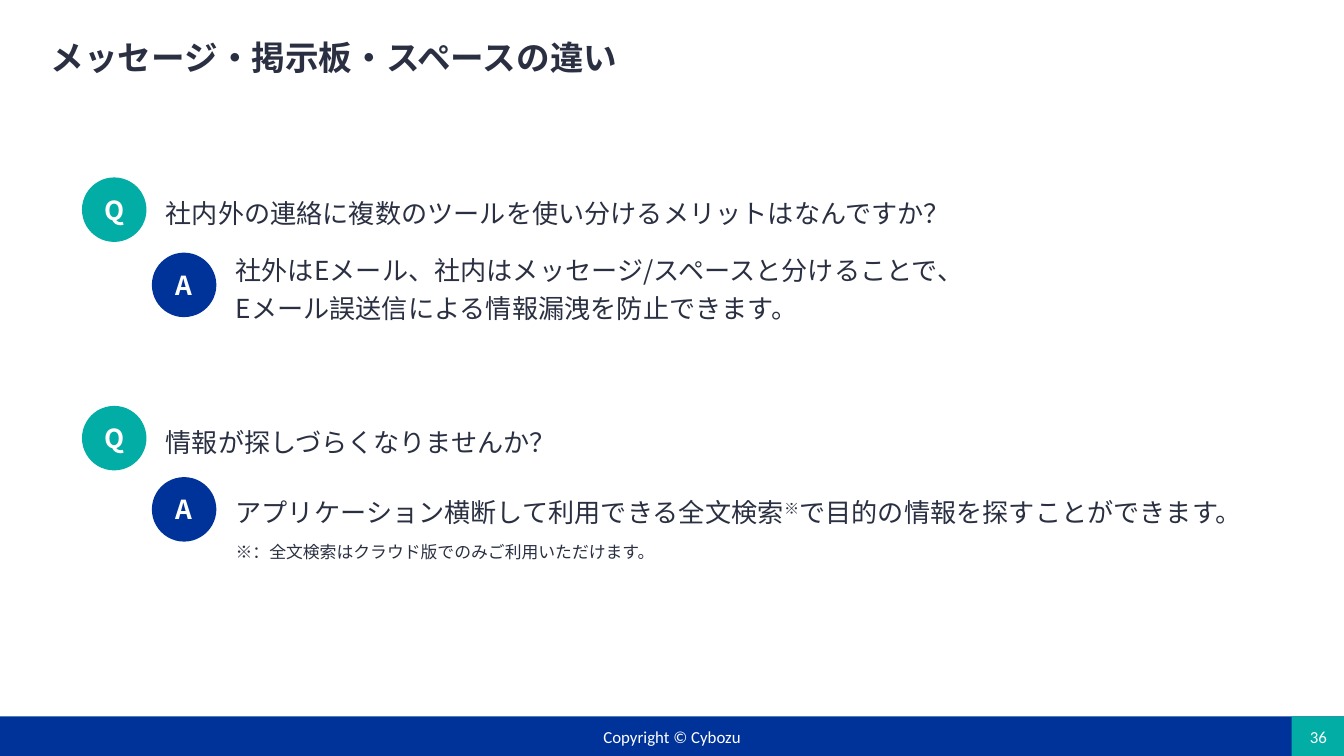
from lxml.etree import SubElement
from pptx import Presentation
from pptx.dml.color import RGBColor
from pptx.enum.shapes import MSO_SHAPE
from pptx.enum.text import MSO_ANCHOR, PP_ALIGN
from pptx.oxml.ns import qn
from pptx.util import Inches, Pt

CELL = 0.1
COLUMNS, ROWS = 100, 56.25
FOOTER_ROW = 53.3
FOOTER_ROWS = ROWS - FOOTER_ROW
QUESTION_COLUMN, ANSWER_COLUMN = 6.1, 11.3
BADGE_CELLS = 4.8
TEXT_OFFSET = 5.25

BLUE, TEAL, INK, WHITE = "003399", "01ADA4", "2A3042", "FFFFFF"
BODY_FONT, FOOTER_FONT = "Noto Sans CJK JP", "Calibri"


def color(hex_code):
    return RGBColor.from_string(hex_code)


def place(column, row, columns, rows):
    return [Inches(cells * CELL) for cells in (column, row, columns, rows)]


def set_margins(frame, horizontal, vertical):
    frame.margin_left = frame.margin_right = Inches(horizontal)
    frame.margin_top = frame.margin_bottom = Inches(vertical)


def add_span(para, text, size, hex_code=INK, font=BODY_FONT, bold=False, **attributes):
    span = para.add_run()
    span.text = text
    span.font.size = Pt(size)
    span.font.bold = bold
    span.font.name = font
    span.font.color.rgb = color(hex_code)
    properties = span._r.get_or_add_rPr()
    SubElement(properties, qn("a:ea"), typeface=font)
    for name, value in attributes.items():
        properties.set(name, value)


def add_block(page, kind, area, fill):
    block = page.shapes.add_shape(kind, *place(*area))
    block.shadow.inherit = False
    block.fill.solid()
    block.fill.fore_color.rgb = color(fill)
    block.line.fill.background()
    return block


def add_text(page, area, anchor=MSO_ANCHOR.TOP, spacing=None):
    frame = page.shapes.add_textbox(*place(*area)).text_frame
    frame.word_wrap = True
    frame.vertical_anchor = anchor
    para = frame.paragraphs[0]
    if spacing:
        para.line_spacing = spacing
    return frame, para


def add_title(page, text):
    frame, para = add_text(page, (2.8, 2.1, 90, 4.7), MSO_ANCHOR.MIDDLE, 0.9)
    add_span(para, text, 18, bold=True)


def add_badge(page, letter, column, row, fill):
    area = (column, row, BADGE_CELLS, BADGE_CELLS)
    badge = add_block(page, MSO_SHAPE.ROUNDED_RECTANGLE, area, fill)
    badge.adjustments[0] = 0.5
    frame = badge.text_frame
    set_margins(frame, 0, 0)
    frame.vertical_anchor = MSO_ANCHOR.MIDDLE
    para = frame.paragraphs[0]
    para.alignment = PP_ALIGN.CENTER
    add_span(para, letter, 14, WHITE, bold=True, spc="80")


def add_entry(page, letter, column, badge_row, text_row, columns, lines):
    fill = TEAL if letter == "Q" else BLUE
    add_badge(page, letter, column, badge_row, fill)
    area = (column + TEXT_OFFSET, text_row, columns, 0.9 + 2.8 * len(lines))
    frame, para = add_text(page, area, spacing=1.2)
    for index, line in enumerate(lines):
        if index:
            para.add_line_break()
        for text in line:
            attributes = {"baseline": "30000"} if text == "※" else {}
            add_span(para, text, 14, **attributes)


def add_note(page, text):
    frame, para = add_text(page, (ANSWER_COLUMN + TEXT_OFFSET, 39.8, 51.1, 2.5))
    add_span(para, text, 9)


def add_footer_text(page, area, text):
    frame, para = add_text(page, area, MSO_ANCHOR.MIDDLE)
    set_margins(frame, 0.07, 0.04)
    para.alignment = PP_ALIGN.CENTER
    add_span(para, text, 9, WHITE, FOOTER_FONT)


def add_footer(page):
    add_block(page, MSO_SHAPE.RECTANGLE, (0, FOOTER_ROW, COLUMNS, FOOTER_ROWS), BLUE)
    add_block(page, MSO_SHAPE.RECTANGLE, (96.1, FOOTER_ROW, 3.9, FOOTER_ROWS), TEAL)
    add_footer_text(page, (33.1, 53.8, 33.8, 2), "Copyright © Cybozu")
    add_footer_text(page, (95.9, 53.6, 4.4, 2.4), "36")


def main():
    deck = Presentation()
    deck.slide_width = Inches(COLUMNS * CELL)
    deck.slide_height = Inches(ROWS * CELL)
    page = deck.slides.add_slide(deck.slide_layouts[6])

    add_footer(page)
    add_title(page, "メッセージ・掲示板・スペースの違い")
    entries = [
        ("Q", QUESTION_COLUMN, 13.2, 13.7, 88.6,
         [["社内外の連絡に複数のツールを使い分けるメリットはなんですか？"]]),
        ("A", ANSWER_COLUMN, 18.8, 18, 58.7,
         [["社外はEメール、社内はメッセージ/スペースと分けることで、"],
          ["Eメール誤送信による情報漏洩を防止できます。"]]),
        ("Q", QUESTION_COLUMN, 30.2, 30.8, 44.3,
         [["情報が探しづらくなりませんか？"]]),
        ("A", ANSWER_COLUMN, 35.5, 36, 77.7,
         [["アプリケーション横断して利用できる全文検索", "※", "で目的の情報を探すことができます。"]]),
    ]
    for entry in entries:
        add_entry(page, *entry)
    add_note(page, "※：全文検索はクラウド版でのみご利用いただけます。")
    deck.save("out.pptx")


if __name__ == "__main__":
    main()
